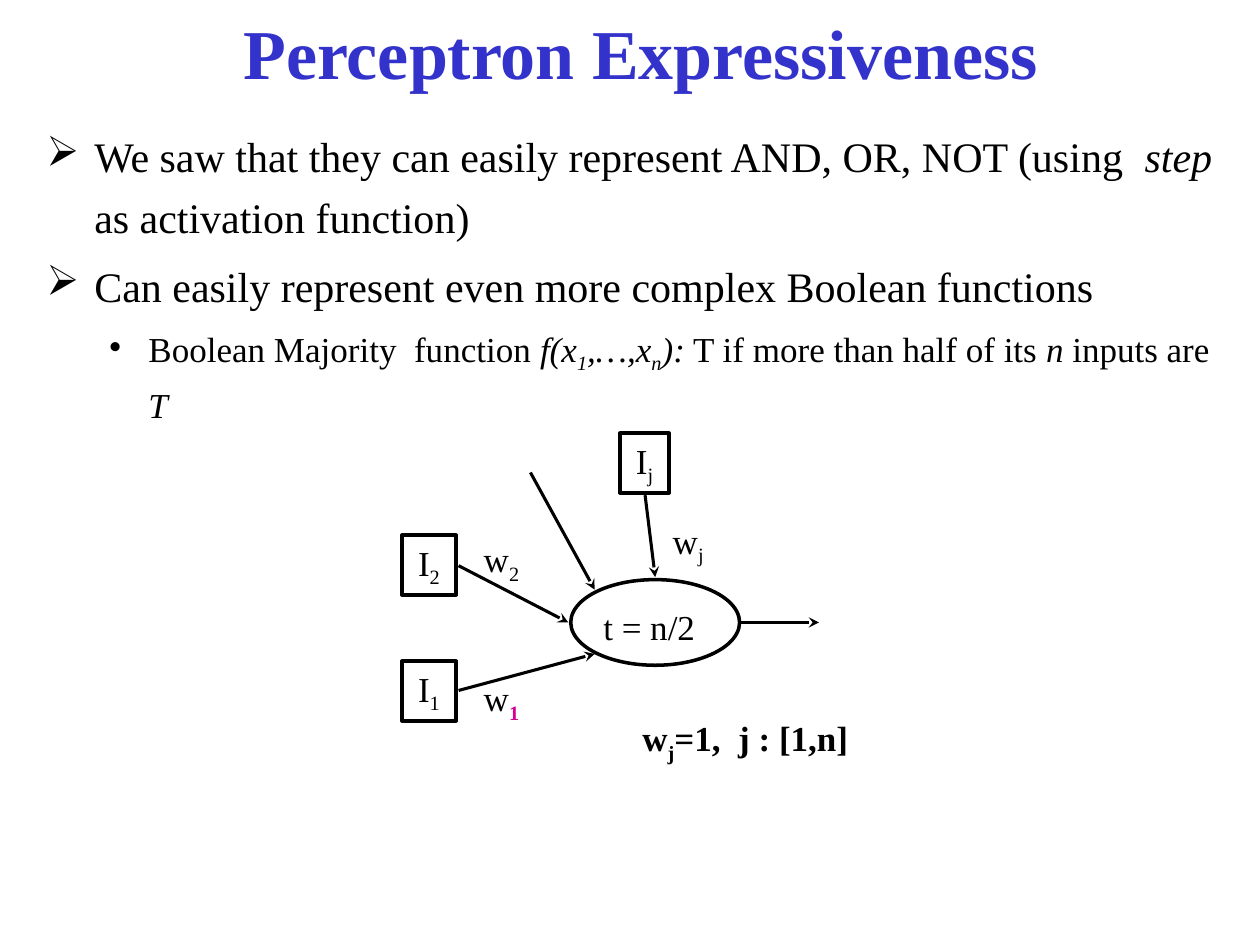
"""Build the Perceptron Expressiveness slide."""
from dataclasses import dataclass

from lxml import etree
from pptx import Presentation
from pptx import util as u
from pptx.dml.color import RGBColor
from pptx.enum import shapes, text
from pptx.oxml.ns import qn


@dataclass(frozen=True)
class Theme:
    font: str = "Times New Roman"
    title: str = "3333CC"
    ink: str = "000000"
    accent: str = "D60093"
    title_size: int = 40
    body_size: int = 24
    label_size: int = 20
    box_line: float = 2.25
    oval_line: float = 2
    arrow_line: float = 1.75


THEME = Theme()
MIDDLE = text.MSO_ANCHOR.MIDDLE
CENTER = text.PP_ALIGN.CENTER


def apply(target, values):
    for name, value in values.items():
        setattr(target, name, value)


def inches(*lengths):
    return [u.Inches(length) for length in lengths]


def add_spans(para, spans, size, color=THEME.ink):
    for words, marks, *own_color in spans:
        span = para.add_run()
        span.text = words
        apply(span.font, {"name": THEME.font, "size": u.Pt(size),
                          "bold": "b" in marks, "italic": "i" in marks})
        span.font.color.rgb = RGBColor.from_string(own_color[0] if own_color else color)
        if "s" in marks:
            span._r.get_or_add_rPr().set("baseline", "-25000")


def add_title(slide, words):
    title = slide.shapes.title
    apply(title, dict(zip(("left", "top", "width", "height"), inches(0.42, 0, 9.33, 0.82))))
    apply(title.text_frame, {"vertical_anchor": MIDDLE, "word_wrap": True})
    para = title.text_frame.paragraphs[0]
    para.alignment = CENTER
    add_spans(para, [(words, "b")], THEME.title_size, THEME.title)


def add_bullets(slide, place, items):
    frame = slide.shapes.add_textbox(*inches(*place)).text_frame
    frame.word_wrap = True
    for index, (level, spans) in enumerate(items):
        para = frame.add_paragraph() if index else frame.paragraphs[0]
        margin, indent, mark, size = (
            (0.81, -0.31, "\u2022", THEME.label_size) if level
            else (0.38, -0.38, "\u27a2", THEME.body_size))
        apply(para, {"level": level, "line_spacing": 1.2, "space_before": u.Pt(size * 0.2)})
        props = para._p.get_or_add_pPr()
        props.set("marL", str(u.Inches(margin)))
        props.set("indent", str(u.Inches(indent)))
        etree.SubElement(props, qn("a:buChar")).set("char", mark)
        add_spans(para, spans, size)


def add_label(slide, place, spans):
    frame = slide.shapes.add_textbox(*inches(*place)).text_frame
    apply(frame, {"word_wrap": False, "auto_size": text.MSO_AUTO_SIZE.SHAPE_TO_FIT_TEXT})
    add_spans(frame.paragraphs[0], spans, THEME.label_size)


def add_node(slide, kind, place, weight, spans=()):
    node = slide.shapes.add_shape(kind, *inches(*place))
    node.shadow.inherit = False
    node.fill.background()
    node.line.color.rgb = RGBColor.from_string(THEME.ink)
    node.line.width = u.Pt(weight)
    apply(node.text_frame, {"word_wrap": False, "vertical_anchor": MIDDLE})
    para = node.text_frame.paragraphs[0]
    para.alignment = CENTER
    add_spans(para, spans, THEME.label_size)


def add_arrow(slide, ends):
    arrow = slide.shapes.add_connector(shapes.MSO_CONNECTOR.STRAIGHT, *inches(*ends))
    arrow.line.color.rgb = RGBColor.from_string(THEME.ink)
    arrow.line.width = u.Pt(THEME.arrow_line)
    etree.SubElement(arrow.line._get_or_add_ln(), qn("a:tailEnd")).set("type", "stealth")
    etree.SubElement(arrow._element.spPr, qn("a:effectLst"))


def add_network(slide):
    add_node(slide, shapes.MSO_SHAPE.OVAL, (4.53, 4.6, 1.34, 0.68), THEME.oval_line)
    add_label(slide, (4.69, 4.76, 0.93, 0.43), [("t = n/2", "")])
    inputs = [
        ("1", (3.19, 5.25, 0.43), (3.74, 5.32, 0.49), ("1", "bs", THEME.accent)),
        ("2", (3.19, 4.25, 0.43), (3.74, 4.22, 0.49), ("2", "s")),
        ("j", (4.92, 3.44, 0.39), (5.24, 4.07, 0.45), ("j", "s")),
    ]
    for name, box, label, weight in inputs:
        add_node(slide, shapes.MSO_SHAPE.RECTANGLE, (*box, 0.47), THEME.box_line,
                 [("I", ""), (name, "s")])
        add_label(slide, (*label, 0.43), [("w", ""), weight])
    for ends in [(3.64, 5.48, 4.72, 5.19), (3.64, 4.49, 4.51, 4.94),
                 (4.21, 3.75, 4.72, 4.68), (5.12, 3.93, 5.2, 4.58),
                 (5.88, 4.94, 6.5, 4.94)]:
        add_arrow(slide, ends)
    add_label(slide, (5, 5.64, 1.84, 0.43),
              [("w", "b"), ("j", "bs"), ("=1,  j : [1,n]", "b")])


def main():
    deck = Presentation()
    apply(deck, {"slide_width": u.Inches(10), "slide_height": u.Inches(7.5)})
    slide = deck.slides.add_slide(deck.slide_layouts[5])
    add_title(slide, "Perceptron Expressiveness")
    add_bullets(slide, (0.27, 0.91, 9.58, 1.25), [
        (0, [("We saw that they can easily represent AND, OR, NOT (using  ", ""),
             ("step", "i"), ("  as activation function)", "")]),
        (0, [("Can easily represent even more complex Boolean functions", "")]),
        (1, [("Boolean Majority  function ", ""), ("f(x", "i"), ("1", "is"),
             (",\u2026,x", "i"), ("n", "is"), ("):", "i"),
             (" T if more than half of its ", ""), ("n", "i"),
             (" inputs are ", ""), ("T", "i")]),
    ])
    add_network(slide)
    deck.save("out.pptx")


main()
